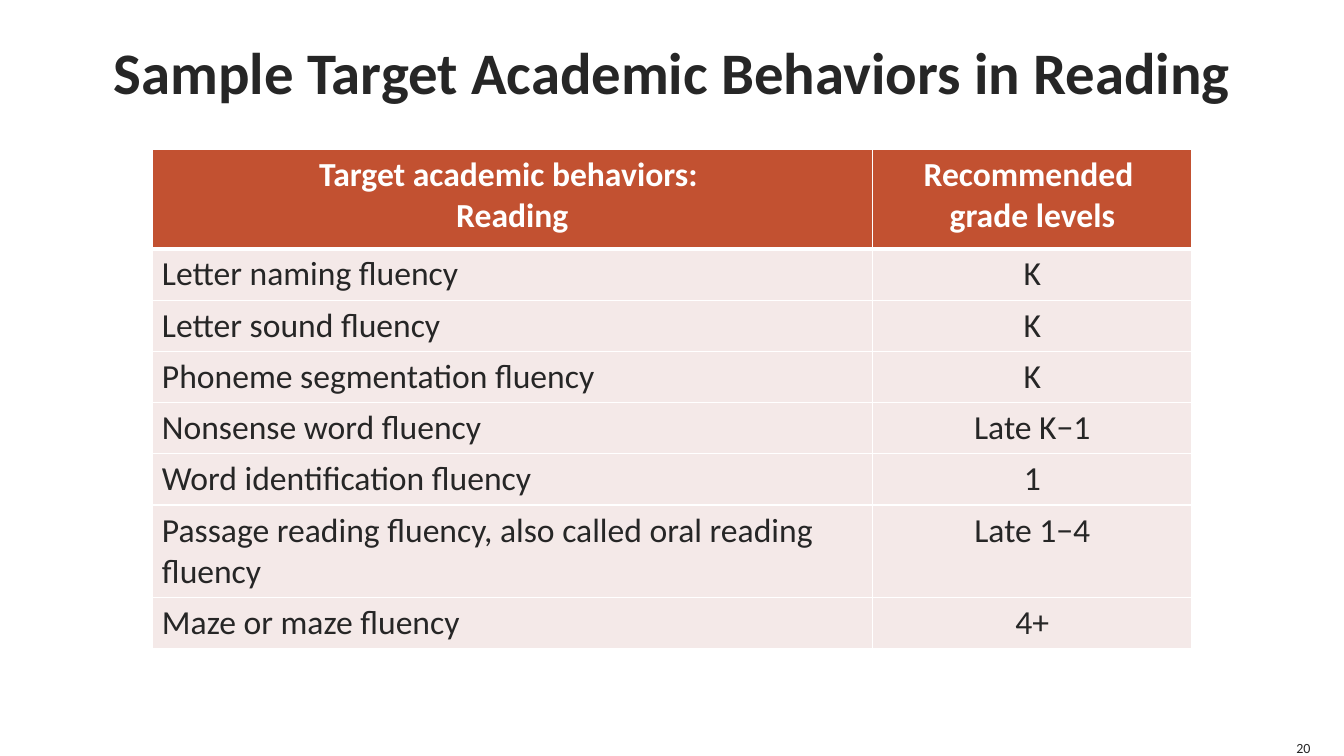
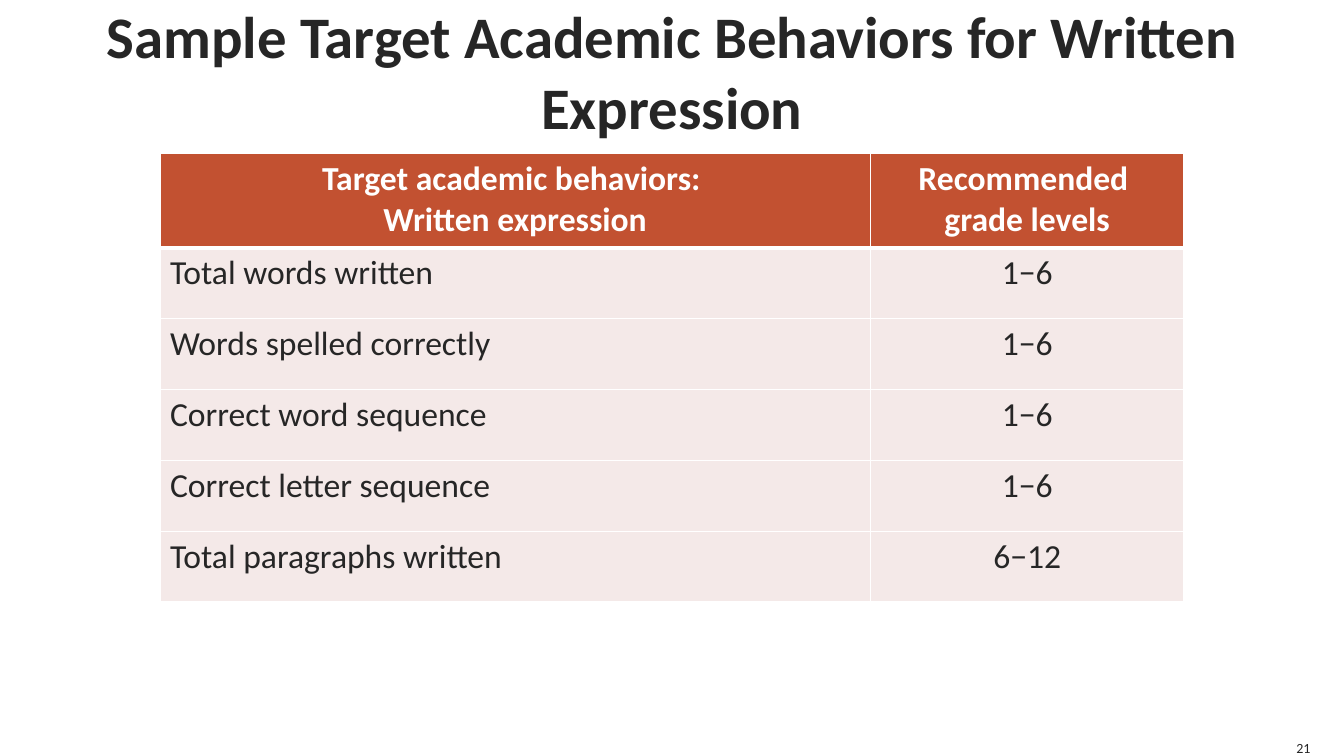
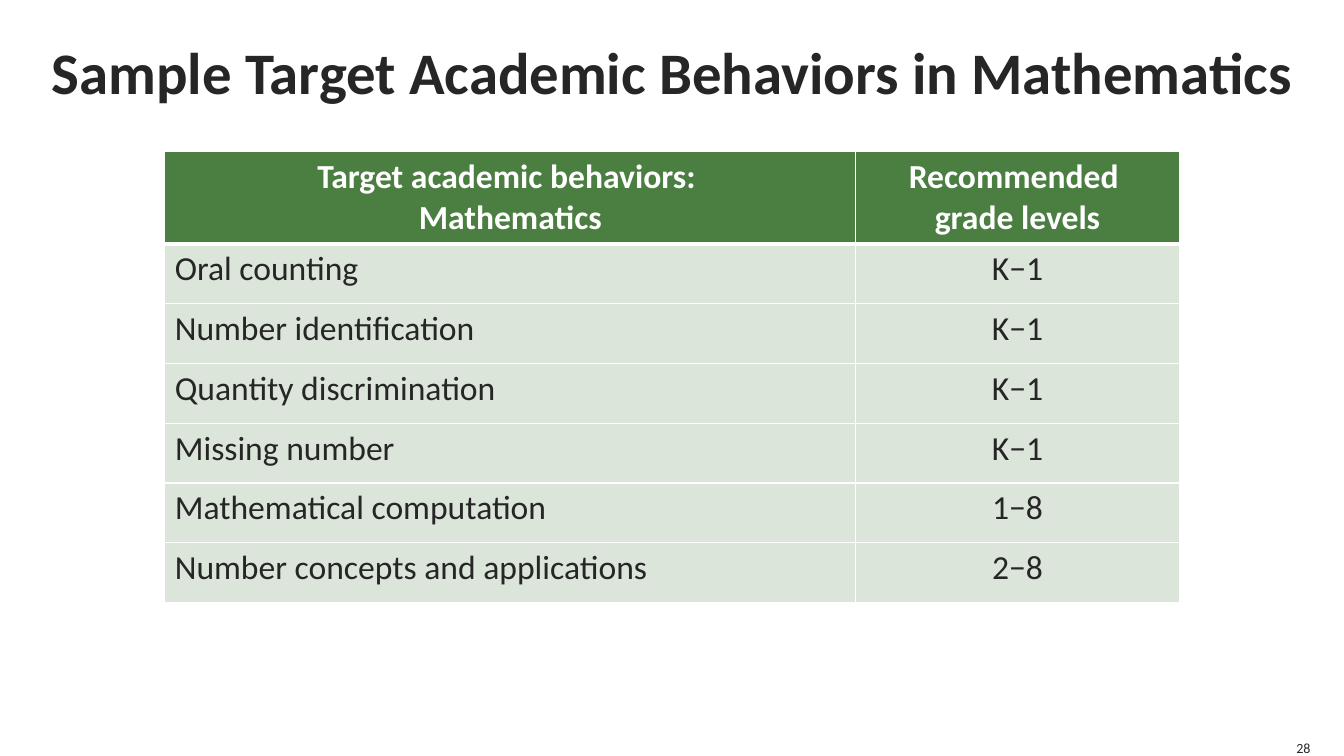
from lxml.etree import SubElement
from pptx import Presentation
from pptx.dml.color import RGBColor
from pptx.enum.text import MSO_ANCHOR, MSO_AUTO_SIZE, PP_ALIGN
from pptx.oxml import parse_xml
from pptx.oxml.ns import nsdecls, qn
from pptx.util import Pt

FONT = "Calibri"
INK = RGBColor(0x26, 0x26, 0x26)
WHITE = RGBColor(0xFF, 0xFF, 0xFF)
RUST = RGBColor(0xC2, 0x51, 0x31)
BLUSH = RGBColor(0xF4, 0xE9, 0xE8)
GREEN = RGBColor(0x4B, 0x7E, 0x41)

SLIDE_WIDTH, SLIDE_HEIGHT = 960, 540
TITLE_BOX = (36, 0, 888, 101)
NUMBER_BOX = (924, 528, 12, 12)
HAIRLINE, HEADER_RULE = 1, 3

# A theme is header fill, body fill and body opacity in percent.
READING_THEME = (RUST, BLUSH, 100)
MATH_THEME = (GREEN, GREEN, 20)

SLIDES = [
    {
        "title": "Sample Target Academic Behaviors in Reading",
        "subject": "Reading",
        "number": "20",
        "theme": READING_THEME,
        "top": 106.8,
        "columns": (514.8, 228.2),
        "header_height": 71,
        "row_height": 36.6,
        "tall_rows": {6: 65.8},
        "rows": [
            ("Letter naming fluency", "K"),
            ("Letter sound fluency", "K"),
            ("Phoneme segmentation fluency", "K"),
            ("Nonsense word fluency", "Late K−1"),
            ("Word identification fluency", "1"),
            ("Passage reading fluency, also called oral reading fluency", "Late 1−4"),
            ("Maze or maze fluency", "4+"),
        ],
    },
    {
        "title": "Sample Target Academic Behaviors for Written Expression",
        "subject": "Written expression",
        "number": "21",
        "theme": READING_THEME,
        "top": 109.5,
        "columns": (507.5, 224),
        "header_height": 67.5,
        "row_height": 50.6,
        "rows": [
            ("Total words written", "1−6"),
            ("Words spelled correctly", "1−6"),
            ("Correct word sequence", "1−6"),
            ("Correct letter sequence", "1−6"),
            ("Total paragraphs written", "6−12"),
        ],
    },
    {
        "title": "Sample Target Academic Behaviors in Mathematics",
        "subject": "Mathematics",
        "number": "28",
        "theme": MATH_THEME,
        "top": 108.2,
        "columns": (493.6, 231),
        "header_height": 66,
        "row_height": 42.7,
        "rows": [
            ("Oral counting", "K−1"),
            ("Number identification", "K−1"),
            ("Quantity discrimination", "K−1"),
            ("Missing number", "K−1"),
            ("Mathematical computation", "1−8"),
            ("Number concepts and applications", "2−8"),
        ],
    },
]


def write_lines(frame, lines, size, color, bold, alignment):
    for index, line in enumerate(lines):
        paragraph = frame.paragraphs[0] if index == 0 else frame.add_paragraph()
        paragraph.alignment = alignment
        run = paragraph.add_run()
        run.text = line
        run.font.name = FONT
        run.font.size = Pt(size)
        run.font.bold = bold
        run.font.color.rgb = color


def add_text_box(slide, box, text, size, bold, alignment, anchor, wrap):
    frame = slide.shapes.add_textbox(*map(Pt, box)).text_frame
    frame.margin_left = frame.margin_top = frame.margin_right = frame.margin_bottom = 0
    frame.vertical_anchor = anchor
    frame.word_wrap = wrap
    frame.auto_size = MSO_AUTO_SIZE.NONE if wrap else MSO_AUTO_SIZE.SHAPE_TO_FIT_TEXT
    write_lines(frame, [text], size, INK, bold, alignment)


def style_cell(cell, color, opacity, top_width, bottom_width):
    """Draw white borders, then the fill, in the order the schema asks for."""
    properties = cell._tc.get_or_add_tcPr()
    widths = {"lnL": HAIRLINE, "lnR": HAIRLINE, "lnT": top_width, "lnB": bottom_width}
    for side, width in widths.items():
        properties.append(parse_xml(
            f'<a:{side} {nsdecls("a")} w="{Pt(width)}"><a:solidFill>'
            f'<a:srgbClr val="{WHITE}"/></a:solidFill></a:{side}>'))
    cell.fill.solid()
    cell.fill.fore_color.rgb = color
    if opacity < 100:
        color_element = properties.find(qn("a:solidFill")).find(qn("a:srgbClr"))
        SubElement(color_element, qn("a:alpha"), val=str(opacity * 1000))


def add_behavior_table(slide, content):
    header_fill, body_fill, opacity = content["theme"]
    columns, rows = content["columns"], content["rows"]
    tall_rows = content.get("tall_rows", {})
    heights = [content["header_height"]]
    heights += [tall_rows.get(index, content["row_height"])
                for index in range(1, len(rows) + 1)]
    width = sum(columns)
    table = slide.shapes.add_table(
        len(heights), len(columns), Pt((SLIDE_WIDTH - width) / 2), Pt(content["top"]),
        Pt(width), Pt(sum(heights))).table
    for column, column_width in zip(table.columns, columns):
        column.width = Pt(column_width)
    for row, height in zip(table.rows, heights):
        row.height = Pt(height)

    headings = [("Target academic behaviors: ", content["subject"]),
                ("Recommended ", "grade levels")]
    for column, lines in enumerate(headings):
        cell = table.cell(0, column)
        style_cell(cell, header_fill, 100, HAIRLINE, HEADER_RULE)
        write_lines(cell.text_frame, lines, 24, WHITE, True, PP_ALIGN.CENTER)
    for row, values in enumerate(rows, start=1):
        top_width = HEADER_RULE if row == 1 else HAIRLINE
        for column, value in enumerate(values):
            cell = table.cell(row, column)
            style_cell(cell, body_fill, opacity, top_width, HAIRLINE)
            alignment = PP_ALIGN.CENTER if column else PP_ALIGN.LEFT
            write_lines(cell.text_frame, [value], 24, INK, False, alignment)


def main():
    presentation = Presentation()
    presentation.slide_width = Pt(SLIDE_WIDTH)
    presentation.slide_height = Pt(SLIDE_HEIGHT)
    for content in SLIDES:
        slide = presentation.slides.add_slide(presentation.slide_layouts[6])
        add_text_box(slide, TITLE_BOX, content["title"], 42, True,
                     PP_ALIGN.CENTER, MSO_ANCHOR.MIDDLE, True)
        add_behavior_table(slide, content)
        add_text_box(slide, NUMBER_BOX, content["number"], 10, False,
                     PP_ALIGN.RIGHT, MSO_ANCHOR.BOTTOM, False)
    presentation.save("out.pptx")


if __name__ == "__main__":
    main()
